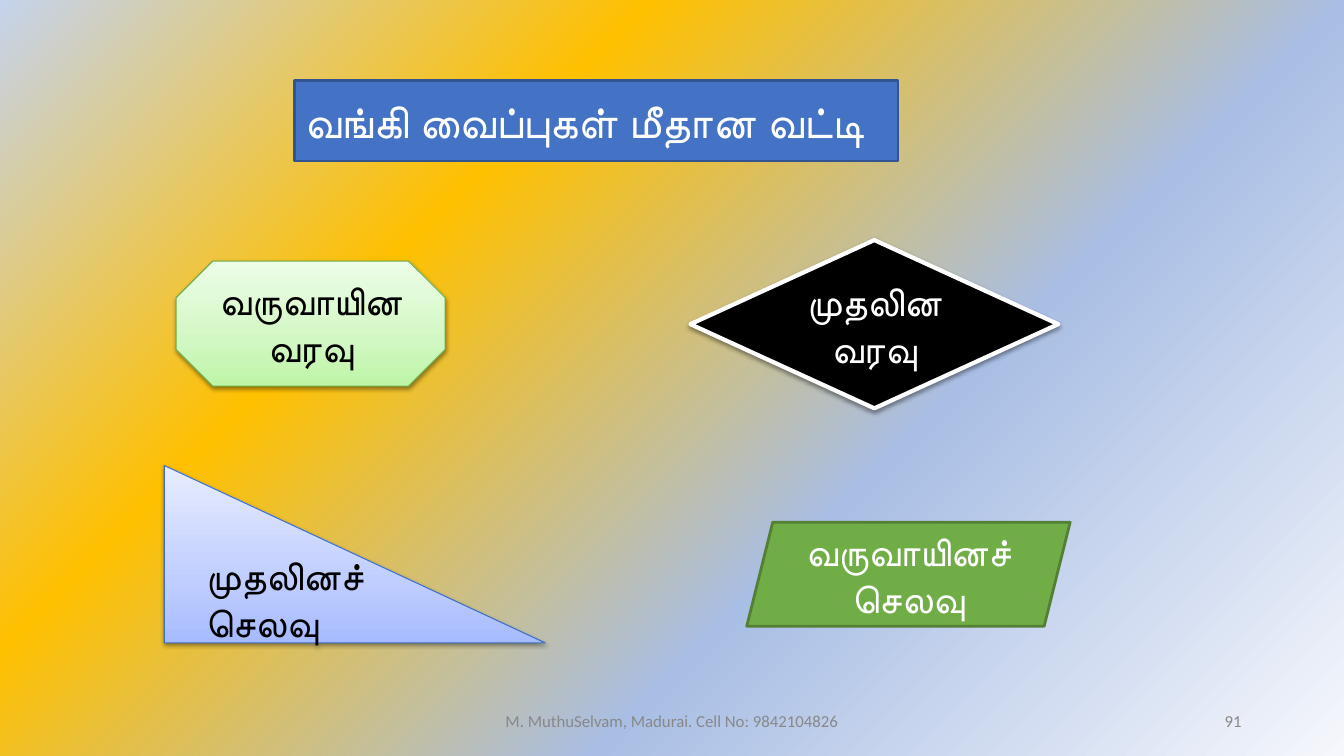
from lxml.etree import SubElement
from pptx import Presentation
from pptx.dml.color import RGBColor
from pptx.enum.shapes import MSO_SHAPE
from pptx.enum.text import MSO_ANCHOR, MSO_AUTO_SIZE, PP_ALIGN
from pptx.oxml import parse_xml
from pptx.oxml.ns import nsdecls, qn
from pptx.util import Cm, Pt

WHITE = RGBColor(0xFF, 0xFF, 0xFF)
BLACK = RGBColor(0, 0, 0)
GRAY = RGBColor(0x88, 0x88, 0x88)
BLUE = RGBColor(0x44, 0x72, 0xC4)
NAVY = RGBColor(0x32, 0x54, 0x91)
SKY = RGBColor(0x3F, 0x6F, 0xC3)
GREEN = RGBColor(0x70, 0xAD, 0x47)
MOSS = RGBColor(0x53, 0x80, 0x35)
LEAF = RGBColor(0x6D, 0xAC, 0x43)

# Gradients: position in percent, colour
MINT = [(0, RGBColor(0xBE, 0xF5, 0xA7)), (35, RGBColor(0xD1, 0xF7, 0xC2)),
        (100, RGBColor(0xED, 0xFD, 0xE7))]
LILAC = [(0, RGBColor(0xA6, 0xBB, 0xFF)), (35, RGBColor(0xC0, 0xCE, 0xFF)),
         (100, RGBColor(0xE7, 0xEC, 0xFF))]
DAWN = [(0, RGBColor(0xF5, 0xF7, 0xFC)), (36, RGBColor(0xA9, 0xBE, 0xE4)),
        (69, RGBColor(0xFF, 0xC0, 0x00)), (100, RGBColor(0xC5, 0xD3, 0xED))]

UPWARD = '<a:lin ang="16200000" scaled="0"/>'
CORNER = ('<a:path path="circle"><a:fillToRect l="100000" t="100000"/></a:path>'
          '<a:tileRect r="-100000" b="-100000"/>')


def blend(stops, course):
    """Return a gradient fill element."""
    marks = "".join(f'<a:gs pos="{pos * 1000}"><a:srgbClr val="{tone}"/></a:gs>'
                    for pos, tone in stops)
    return parse_xml(f'<a:gradFill {nsdecls("a")} rotWithShape="1">'
                     f'<a:gsLst>{marks}</a:gsLst>{course}</a:gradFill>')


def apply(target, values):
    for name, value in values.items():
        setattr(target, name, value)


def place(shape, box):
    apply(shape, dict(zip(("left", "top", "width", "height"), map(Cm, box))))


def write(shape, text, size, color, align, font="Lato"):
    frame = shape.text_frame
    apply(frame, {"text": text, "word_wrap": True, "auto_size": MSO_AUTO_SIZE.NONE,
                  "vertical_anchor": MSO_ANCHOR.MIDDLE})
    para = frame.paragraphs[0]
    para.alignment = align
    run = para.runs[0]
    apply(run.font, {"name": font, "size": Pt(size)})
    run.font.color.rgb = color


def paint(shape, fill, edge, width):
    """Fill with one colour or a gradient, and draw the outline."""
    shape.fill.solid()
    if isinstance(fill, RGBColor):
        shape.fill.fore_color.rgb = fill
    else:
        props = shape._element.spPr
        props.replace(props.find(qn("a:solidFill")), blend(fill, UPWARD))
    shape.line.color.rgb = edge
    shape.line.width = Pt(width)
    shape.shadow.inherit = False


def shade(shape):
    effects = shape._element.spPr.find(qn("a:effectLst"))
    drop = SubElement(effects, qn("a:outerShdw"), blurRad="40000", dist="20000",
                      dir="5400000", rotWithShape="0")
    tone = SubElement(drop, qn("a:srgbClr"), val="000000")
    SubElement(tone, qn("a:alpha"), val="38000")


def backdrop(slide):
    fill = slide.background.fill
    fill.solid()
    solid = slide._element.find(".//" + qn("p:bgPr")).find(qn("a:solidFill"))
    solid.getparent().replace(solid, blend(DAWN, CORNER))


def banner(slide, text, box):
    """Turn the title into a scroll."""
    title = slide.shapes.title
    place(title, box)
    title._element.spPr.append(parse_xml(
        f'<a:prstGeom {nsdecls("a")} prst="horizontalScroll"><a:avLst/></a:prstGeom>'))
    paint(title, BLUE, NAVY, 2)
    write(title, text, 32, WHITE, PP_ALIGN.LEFT)


def label(slide, kind, text, box, fill, edge, width, color, align, raised):
    shape = slide.shapes.add_shape(kind, *map(Cm, box))
    paint(shape, fill, edge, width)
    if raised:
        shade(shape)
    write(shape, text, 28, color, align)


def footer(slide, text, box, align):
    note = slide.shapes.add_textbox(*map(Cm, box))
    write(note, text, 12, GRAY, align, "Calibri")


def main():
    deck = Presentation()
    apply(deck, {"slide_width": Cm(33.87), "slide_height": Cm(19.05)})
    slide = deck.slides.add_slide(deck.slide_layouts[5])
    backdrop(slide)

    # Heading
    banner(slide, "வங்கி வைப்புகள் மீதான வட்டி", (7.42, 2.03, 15.21, 2.03))

    # Four kinds of income and expense
    mid = PP_ALIGN.CENTER
    label(slide, MSO_SHAPE.OCTAGON, "வருவாயின வரவு", (4.44, 6.58, 6.78, 3.15),
          MINT, LEAF, 0.75, BLACK, mid, True)
    label(slide, MSO_SHAPE.DIAMOND, "முதலின வரவு", (17.4, 6.05, 9.27, 4.24),
          BLACK, WHITE, 3, WHITE, mid, True)
    label(slide, MSO_SHAPE.RIGHT_TRIANGLE, "முதலினச் செலவு", (4.14, 11.73, 9.6, 4.47),
          LILAC, SKY, 0.75, BLACK, PP_ALIGN.LEFT, True)
    label(slide, MSO_SHAPE.PARALLELOGRAM, "வருவாயினச் செலவு", (18.82, 13.16, 8.15, 2.62),
          GREEN, MOSS, 2, WHITE, mid, False)

    # Footer and page number
    footer(slide, "M. MuthuSelvam, Madurai. Cell No: 9842104826",
           (11.22, 17.66, 11.43, 1.01), mid)
    footer(slide, "91", (23.92, 17.66, 7.62, 1.01), PP_ALIGN.RIGHT)

    deck.save("out.pptx")


if __name__ == "__main__":
    main()
